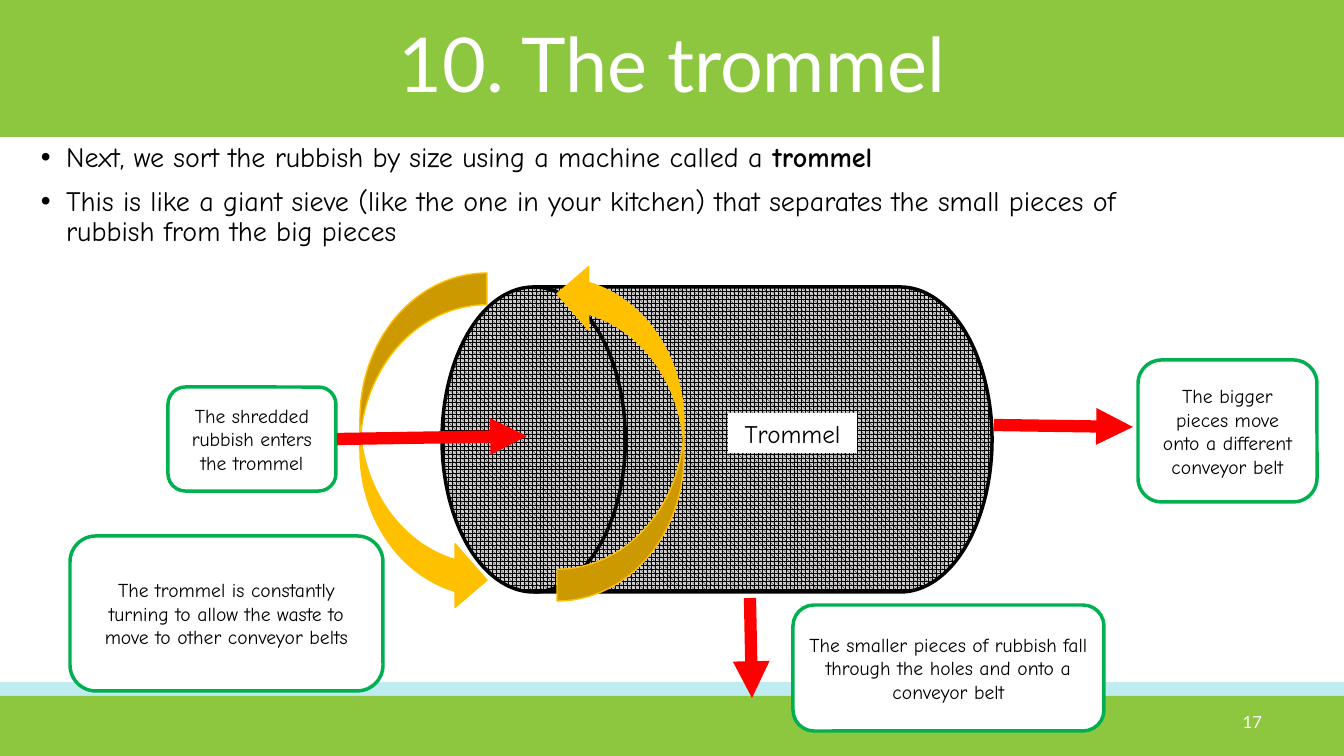
from dataclasses import dataclass

from lxml.etree import SubElement
from pptx import Presentation
from pptx.dml.color import RGBColor
from pptx.enum.dml import MSO_PATTERN
from pptx.enum.shapes import MSO_CONNECTOR, MSO_SHAPE
from pptx.enum.text import MSO_ANCHOR as Anchor, PP_ALIGN as Align
from pptx.oxml.ns import qn
from pptx.util import Emu, Pt


@dataclass(frozen=True)
class Theme:
    """Colours, fonts and type sizes of the slide."""
    green: str = "8DC63F"
    teal: str = "20BFD0"
    outline: str = "00B050"
    gold: str = "FFC000"
    red: str = "FF0000"
    mesh: str = "D0CECE"
    black: str = "000000"
    white: str = "FFFFFF"
    heading_font: str = "Lato"
    body_font: str = "Comic Neue"
    title_size: int = 54
    body_size: int = 20
    label_size: int = 18
    note_size: int = 14
    number_size: int = 12


THEME = Theme()
WIDTH, HEIGHT = 1344, 756
SCALE = 12192000 / WIDTH


def px(length):
    """Turn a length in px into EMU."""
    return Emu(round(length * SCALE))


def rgb(value):
    """Turn a hex string into a colour."""
    return RGBColor.from_string(value)


def add_block(slide, kind, box, fill=None, line=None, weight=2.5):
    """Add a preset shape with a plain fill and an optional outline."""
    block = slide.shapes.add_shape(kind, *map(px, box))
    block.shadow.inherit = False
    if fill:
        block.fill.solid()
        block.fill.fore_color.rgb = rgb(fill)
    if line:
        block.line.color.rgb = rgb(line)
        block.line.width = Pt(weight)
    else:
        block.line.fill.background()
    return block


def add_run(paragraph, words, size, font, color, bold=False):
    """Add one styled run to a paragraph."""
    run = paragraph.add_run()
    run.text = words
    run.font.size = Pt(size)
    run.font.name = font
    run.font.bold = bold
    run.font.color.rgb = rgb(color)


def write_line(holder, words, size, font, color, align=Align.CENTER):
    """Write one vertically centred paragraph into a shape."""
    frame = holder.text_frame
    frame.word_wrap = True
    frame.vertical_anchor = Anchor.MIDDLE
    paragraph = frame.paragraphs[0]
    paragraph.alignment = align
    add_run(paragraph, words, size, font, color)


def add_header(slide, box, title):
    """Draw the title band."""
    band = add_block(slide, MSO_SHAPE.RECTANGLE, box, THEME.green)
    write_line(band, title, THEME.title_size, THEME.heading_font, THEME.white)
    band.text_frame.paragraphs[0].line_spacing = 0.9


def add_footer(slide, box, number):
    """Draw the footer bands and the slide number."""
    left, top, width, height = box
    stripe = add_block(slide, MSO_SHAPE.RECTANGLE, (left, top, width, 24), THEME.teal)
    tint = stripe.fill._xPr.find(qn("a:solidFill"))[0]
    SubElement(tint, qn("a:alpha"), val="29000")
    add_block(slide, MSO_SHAPE.RECTANGLE, (left, top + 14, width, height - 14), THEME.green)
    page = slide.shapes.add_textbox(*map(px, (left + width - 374, top + 20, 302, 40)))
    write_line(page, number, THEME.number_size, THEME.heading_font, THEME.white, Align.RIGHT)


def add_bullets(slide, box, points):
    """Write the bullet list, each point being (words, bold) pairs."""
    frame = slide.shapes.add_textbox(*map(px, box)).text_frame
    frame.word_wrap = True
    for index, point in enumerate(points):
        paragraph = frame.add_paragraph() if index else frame.paragraphs[0]
        paragraph.line_spacing = 0.9
        if index:
            paragraph.space_before = Pt(10)
        props = paragraph._p.get_or_add_pPr()
        props.set("marL", "228600")
        props.set("indent", "-228600")
        SubElement(props, qn("a:buFont"), typeface="Arial")
        SubElement(props, qn("a:buChar"), char="•")
        for words, bold in point:
            add_run(paragraph, words, THEME.body_size, THEME.body_font, THEME.black, bold)


def add_trommel(slide, box):
    """Draw the meshed drum, its two turning arrows and its label."""
    left, top, width, height = box
    drum = add_block(slide, MSO_SHAPE.FLOWCHART_DIRECT_ACCESS_STORAGE, box, line=THEME.black)
    drum.rotation = 180
    drum.fill.patterned()
    drum.fill.pattern = MSO_PATTERN.SPHERE
    drum.fill.fore_color.rgb = rgb(THEME.black)
    drum.fill.back_color.rgb = rgb(THEME.mesh)
    for across, down, angle in ((-82, -14, 0), (115, -25, 180)):
        turn = add_block(slide, MSO_SHAPE.CURVED_RIGHT_ARROW,
                         (left + across, top + down, 127, 339), THEME.gold, THEME.gold, 1)
        turn.rotation = angle
    label = add_block(slide, MSO_SHAPE.RECTANGLE, (left + 286, top + 126, 129, 40), THEME.white)
    write_line(label, "Trommel", THEME.label_size, THEME.body_font, THEME.black)


def add_note(slide, box, words):
    """Draw a rounded note with a green outline."""
    note = add_block(slide, MSO_SHAPE.ROUNDED_RECTANGLE, box, THEME.white, THEME.outline)
    write_line(note, words, THEME.note_size, THEME.body_font, THEME.black)


def add_flow(slide, start, end):
    """Draw a thick red arrow for the path of the rubbish."""
    flow = slide.shapes.add_connector(MSO_CONNECTOR.STRAIGHT, *map(px, start + end))
    flow.line.color.rgb = rgb(THEME.red)
    flow.line.width = Pt(8.75)
    SubElement(flow.line._get_or_add_ln(), qn("a:tailEnd"), type="triangle")
    SubElement(flow._element.spPr, qn("a:effectLst"))


def main():
    """Build and save the slide."""
    deck = Presentation()
    deck.slide_width, deck.slide_height = px(WIDTH), px(HEIGHT)
    slide = deck.slides.add_slide(deck.slide_layouts[6])
    add_header(slide, (0, 0, WIDTH, 137), "10. The trommel")
    add_footer(slide, (0, 682, WIDTH, HEIGHT - 682), "17")
    add_bullets(slide, (31, 138, 1120, 133), [
        [("Next, we sort the rubbish by size using a machine called a ", False),
         ("trommel", True)],
        [("This is like a giant sieve (like the one in your kitchen) that separates "
          "the small pieces of rubbish from the big pieces", False)],
    ])
    add_trommel(slide, (442, 287, 550, 305))
    for box, words in (
        ((168, 387, 168, 104), "The shredded rubbish enters the trommel"),
        ((793, 605, 311, 126), "The smaller pieces of rubbish fall through the holes "
                               "and onto a conveyor belt"),
        ((1138, 360, 179, 142), "The bigger pieces move onto a different conveyor belt"),
        ((70, 536, 313, 155), "The trommel is constantly turning to allow the waste "
                              "to move to other conveyor belts"),
    ):
        add_note(slide, box, words)
    for start, end in (((337, 439), (527, 436)),
                       ((994, 425), (1133, 427)),
                       ((750, 598), (752, 698))):
        add_flow(slide, start, end)
    deck.save("out.pptx")


if __name__ == "__main__":
    main()
